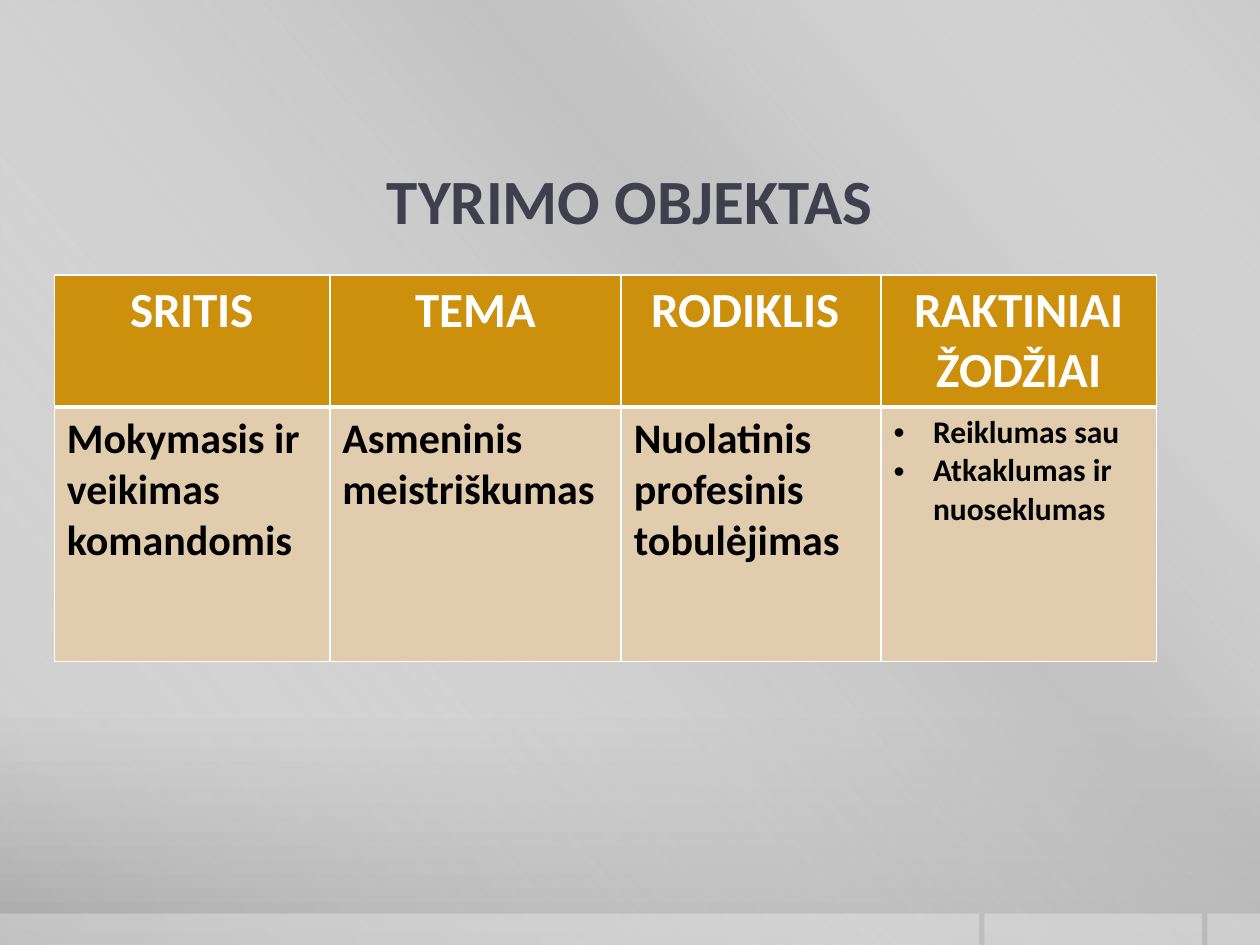
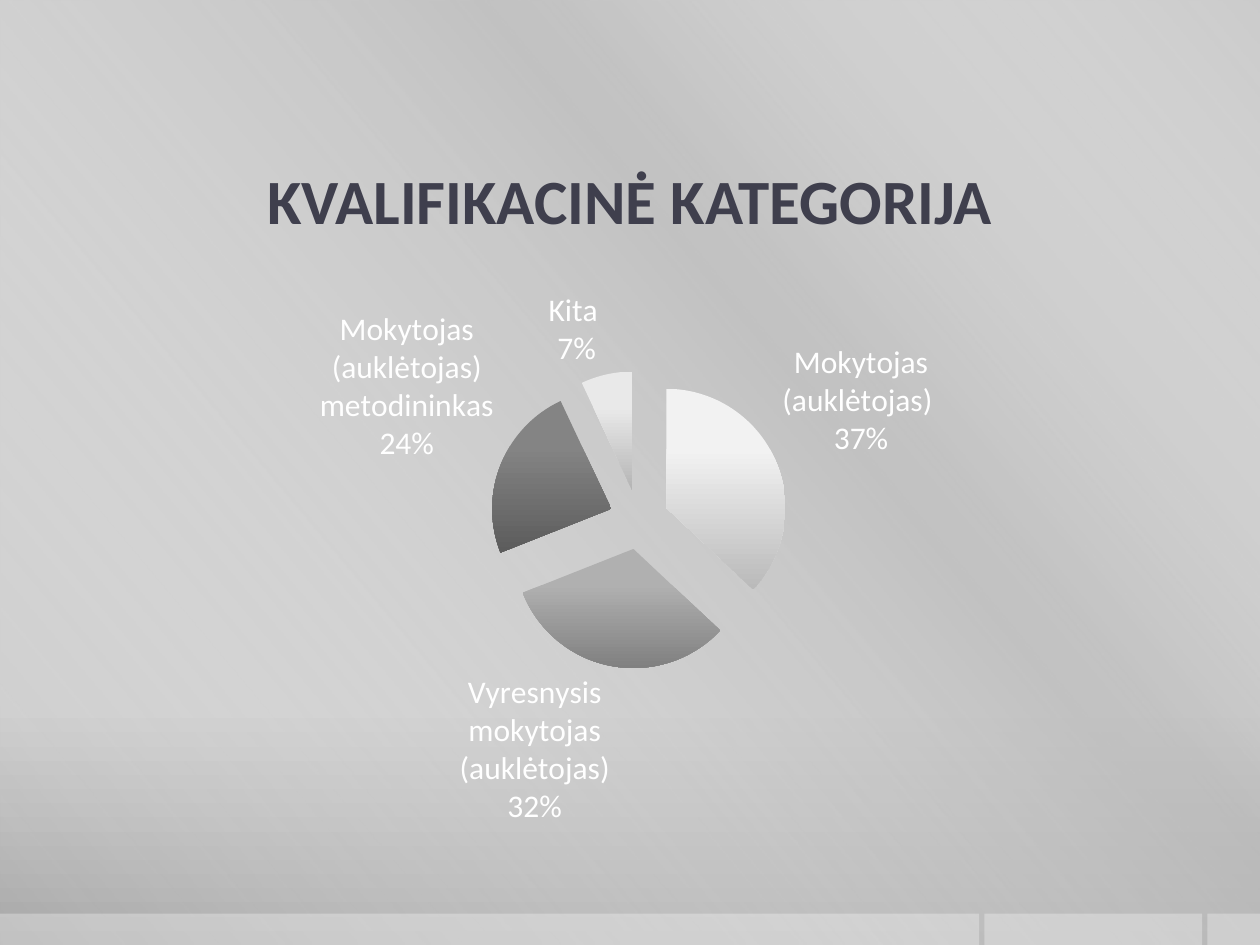
from lxml import etree
from pptx import Presentation
from pptx.chart.data import CategoryChartData
from pptx.dml.color import RGBColor
from pptx.enum.chart import XL_CHART_TYPE as ChartType, XL_LABEL_POSITION as LabelPos
from pptx.enum.shapes import MSO_SHAPE as Preset
from pptx.enum.text import MSO_ANCHOR as Anchor, PP_ALIGN as Align
from pptx.oxml.ns import qn
from pptx.util import Pt

COLORS = {
    "title": "3F3F4D", "white": "FFFFFF", "black": "000000",
    "header": "CD900D", "body": "E1CDAD", "sheen": "BFBFBF",
}
FONT = "Calibri"
WIDTH, HEIGHT = 720, 540


def set_gradient(fill, holder, stops, angle):
    """Fill with (position %, colour, opacity %) stops; angle is clockwise."""
    fill.gradient()
    fill.gradient_angle = 360 - angle
    stop_list = list(holder.iter(qn("a:gsLst")))[-1]
    for old in list(stop_list):
        stop_list.remove(old)
    for position, color, opacity in stops:
        stop = etree.SubElement(stop_list, qn("a:gs"), pos=str(position * 1000))
        rgb = etree.SubElement(stop, qn("a:srgbClr"), val=color)
        if opacity < 100:
            etree.SubElement(rgb, qn("a:alpha"), val=str(opacity * 1000))


def style_font(font, size, color, bold=True):
    font.name, font.size, font.bold = FONT, Pt(size), bold
    font.color.rgb = RGBColor.from_string(COLORS[color])


prs = Presentation()
prs.slide_width, prs.slide_height = Pt(WIDTH), Pt(HEIGHT)
layout = prs.slide_layouts[5]

# Two slides with the shared title style
slides = []
for heading in ("TYRIMO OBJEKTAS", "KVALIFIKACINĖ KATEGORIJA"):
    slide = prs.slides.add_slide(layout)
    title = slide.shapes.title
    title.left, title.top, title.width, title.height = Pt(36), Pt(78), Pt(648), Pt(72)
    frame = title.text_frame
    frame.text = heading
    frame.vertical_anchor = Anchor.MIDDLE
    frame.margin_left = frame.margin_right = 0
    frame.paragraphs[0].alignment = Align.CENTER
    style_font(frame.paragraphs[0].font, 36, "title")
    slides.append(slide)
object_slide, category_slide = slides

# Shared background, sheen and footer bars, kept on the layout
set_gradient(layout.background.fill, layout.element,
             [(0, "CBCBCB", 100), (76, "C8C8C8", 100), (100, "A7A7A7", 100)], 90)
backdrop = [(0, 0, WIDTH, HEIGHT)]
backdrop += [(left, 522, width, 18) for left, width in ((690, 30), (562.5, 124.5), (0, 559.5))]
for order, box in enumerate(backdrop):
    panel = object_slide.shapes.add_shape(Preset.RECTANGLE, *map(Pt, box))
    panel.shadow.inherit = False
    panel.line.fill.background()
    if order == 0:
        white, sheen = COLORS["white"], COLORS["sheen"]
        set_gradient(panel.fill, panel.element,
                     [(0, white, 0), (34, sheen, 61), (38, sheen, 76), (100, white, 0)], 140)
    else:
        panel.fill.solid()
        panel.fill.fore_color.rgb = RGBColor.from_string(COLORS["white"])
        rgb = panel.element.spPr.find(qn("a:solidFill")).find(qn("a:srgbClr"))
        etree.SubElement(rgb, qn("a:alpha"), val="30000")
    layout.shapes.element.insert(2 + order, panel.element)

# Slide 1: research object table
research_rows = [
    ["SRITIS", "TEMA", "RODIKLIS ", "RAKTINIAI ŽODŽIAI"],
    ["Mokymasis ir veikimas komandomis", "Asmeninis meistriškumas",
     "Nuolatinis profesinis tobulėjimas", "Reiklumas sau\nAtkaklumas ir nuoseklumas"],
]
column_widths = [157.5, 166.5, 148.5, 157.5]
row_heights = [75, 145.5]
research = object_slide.shapes.add_table(
    2, 4, Pt(31), Pt(157), Pt(sum(column_widths)), Pt(sum(row_heights))).table
for column, width in zip(research.columns, column_widths):
    column.width = Pt(width)
for row, height in zip(research.rows, row_heights):
    row.height = Pt(height)

for r, texts in enumerate(research_rows):
    is_header = r == 0
    for c, text in enumerate(texts):
        cell = research.cell(r, c)
        cell.text = text
        cell.fill.solid()
        cell.fill.fore_color.rgb = RGBColor.from_string(COLORS["header" if is_header else "body"])
        is_keywords = not is_header and c == 3
        for paragraph in cell.text_frame.paragraphs:
            if is_keywords:
                props = paragraph._p.get_or_add_pPr()
                props.set("marL", str(Pt(22.5)))
                props.set("indent", str(Pt(-22.5)))
                etree.SubElement(props, qn("a:buFont"), typeface="Arial")
                etree.SubElement(props, qn("a:buChar"), char="•")
            if is_header:
                paragraph.alignment = Align.CENTER
                style_font(paragraph.font, 28, "white")
            else:
                style_font(paragraph.font, 18 if is_keywords else 24, "black")
        # White borders, thick between header and body
        thick_side = "lnB" if is_header else "lnT"
        for place, side in enumerate(("lnL", "lnR", "lnT", "lnB")):
            border = etree.Element(qn(f"a:{side}"), w=str(Pt(3 if side == thick_side else 1)))
            paint = etree.SubElement(border, qn("a:solidFill"))
            etree.SubElement(paint, qn("a:srgbClr"), val=COLORS["white"])
            cell._tc.get_or_add_tcPr().insert(place, border)

# Slide 2: exploded pie of qualification categories
qualification = CategoryChartData()
qualification.categories = [
    "Mokytojas (auklėtojas) ", "Vyresnysis mokytojas (auklėtojas)",
    "Mokytojas (auklėtojas) metodininkas", "Kita ",
]
qualification.add_series("Series 1", (37, 32, 24, 7))
pie = category_slide.shapes.add_chart(
    ChartType.PIE, Pt(36), Pt(156), Pt(648), Pt(326), qualification).chart
pie.has_legend = pie.has_title = False
style_font(pie.font, 18, "white", bold=False)
plot = pie.plots[0]
plot.vary_by_categories = True

shares = plot.series[0]
share_xml = shares._element
explosion = etree.Element(qn("c:explosion"), val="25")
share_xml.find(qn("c:tx")).addnext(explosion)
slice_shades = [("F2F2F2", "BABABA"), ("B0B0B0", "808080"),
                ("848484", "5C5C5C"), ("E9E9E9", "B4B4B4")]
for index, (light, dark) in enumerate(slice_shades):
    slice_format = shares.points[index].format
    set_gradient(slice_format.fill, share_xml,
                 [(0, light, 100), (30, light, 100), (100, dark, 100)], 90)
    slice_format.line.fill.background()

plot.has_data_labels = True
labels = plot.data_labels
labels.show_category_name = labels.show_percentage = True
labels.show_value = False
labels.number_format, labels.number_format_is_linked = "0%", False
labels.position = LabelPos.OUTSIDE_END
style_font(labels.font, 18, "white", bold=False)
separator = etree.Element(qn("c:separator"))
separator.text = "\n"
labels._element.find(qn("c:showBubbleSize")).addnext(separator)

prs.save("out.pptx")
